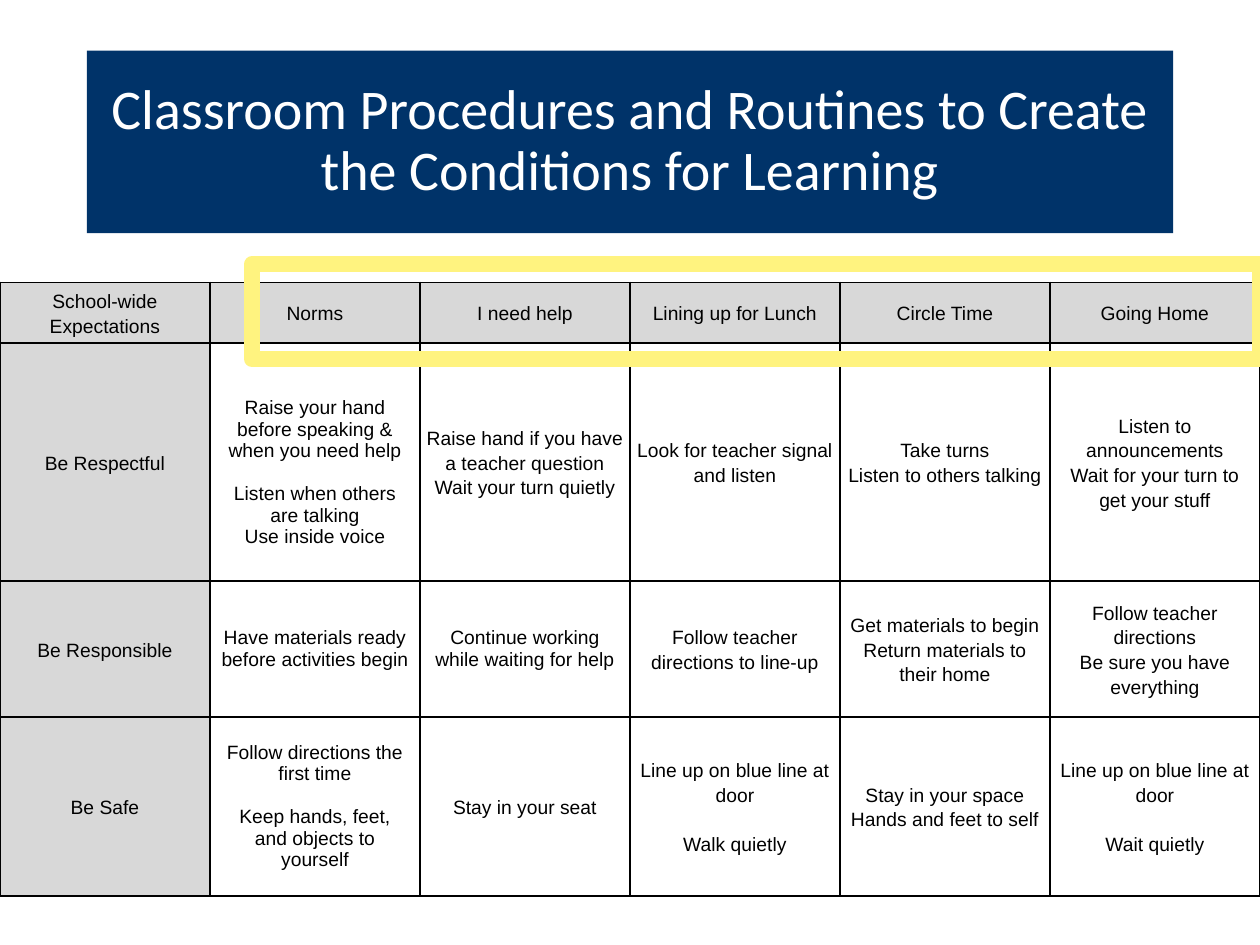
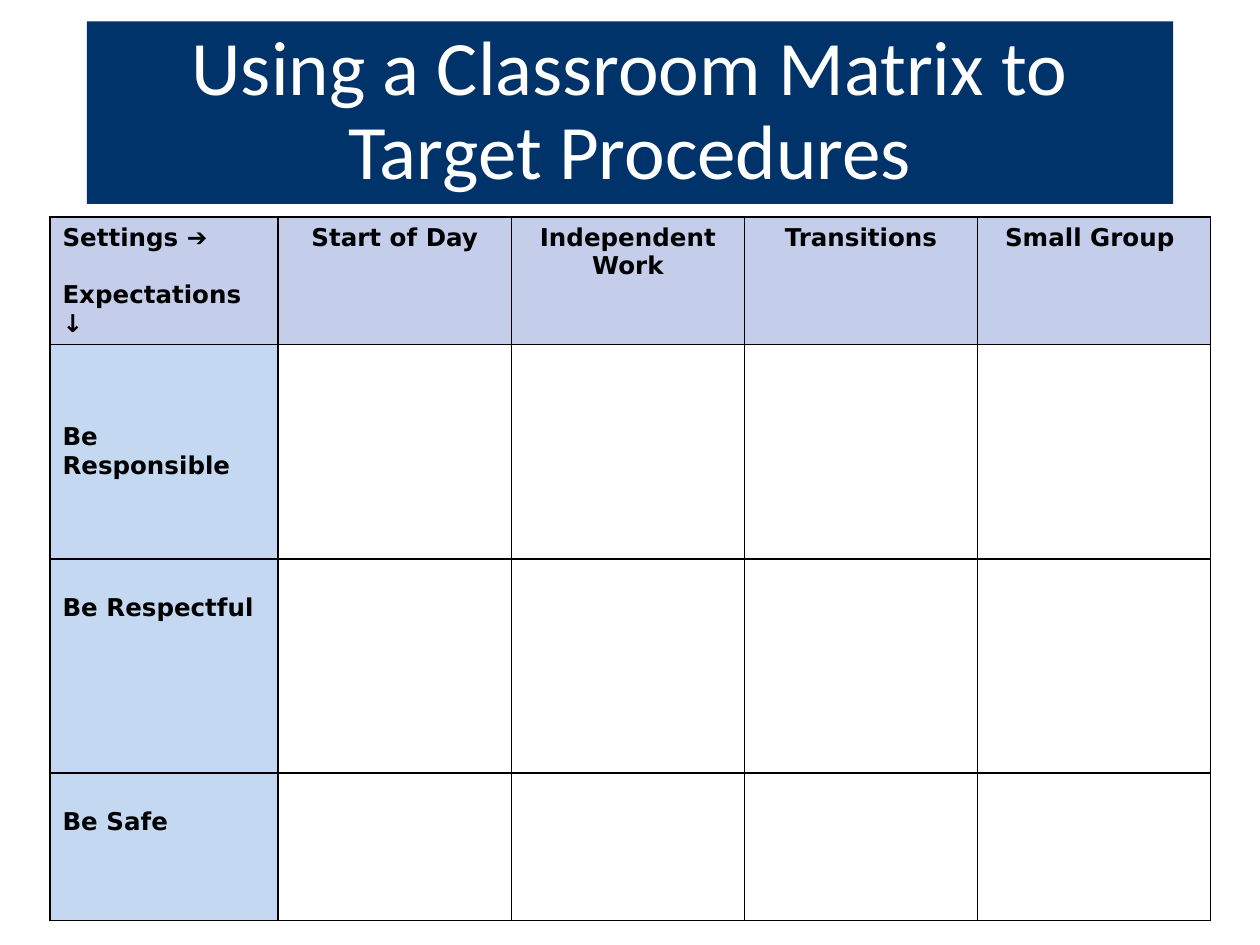
import pptx
import pptx.dml.color
import pptx.enum.shapes
import pptx.enum.text
import pptx.oxml.ns
import pptx.util
from lxml import etree

Cm = pptx.util.Cm
Pt = pptx.util.Pt
RGBColor = pptx.dml.color.RGBColor
ALIGN = pptx.enum.text.PP_ALIGN
ANCHOR = pptx.enum.text.MSO_ANCHOR
RECTANGLE = pptx.enum.shapes.MSO_SHAPE.RECTANGLE

NAVY = RGBColor(0x00, 0x33, 0x69)
WHITE = RGBColor(0xFF, 0xFF, 0xFF)
BLACK = RGBColor(0x00, 0x00, 0x00)
GREY = RGBColor(0xD8, 0xD8, 0xD8)
YELLOW = RGBColor(0xFF, 0xF3, 0x7F)
LAVENDER = RGBColor(0xC4, 0xCD, 0xEA)
PALE_BLUE = RGBColor(0xC5, 0xD8, 0xF1)

# Boxes are left, top, width, height in centimetres
SLIDE_W, SLIDE_H = 25.4, 19.05
TITLE_X, TITLE_W, TITLE_H = 1.75, 21.9, 3.68

# A line break starts a paragraph, a double one also leaves a gap
ROUTINES = [
    ["School-wide Expectations", "Norms", "I need help", "Lining up for Lunch",
     "Circle Time", "Going Home"],
    ["Be Respectful",
     "Raise your hand before speaking & when you need help\n\n"
     "Listen when others\nare talking\nUse inside voice",
     "Raise hand if you have a teacher question\nWait your turn quietly",
     "Look for teacher signal and listen",
     "Take turns\nListen to others talking",
     "Listen to announcements\nWait for your turn to get your stuff"],
    ["Be Responsible",
     "Have materials ready before activities begin",
     "Continue working while waiting for help",
     "Follow teacher directions to line-up",
     "Get materials to begin\nReturn materials to their home",
     "Follow teacher directions\nBe sure you have everything"],
    ["Be Safe",
     "Follow directions the\nfirst time\n\n"
     "Keep hands, feet,\nand objects to\nyourself",
     "Stay in your seat",
     "Line up on blue line at door\n\nWalk quietly",
     "Stay in your space\nHands and feet to self",
     "Line up on blue line at door\n\nWait quietly"],
]
SINGLE_SPACED = {(1, 1), (2, 1), (3, 1), (2, 2)}

SETTINGS = ["Settings ➔\n\nExpectations ↓", "Start of Day",
            "Independent Work", "Transitions", "Small Group "]
EXPECTATIONS = ["Be Responsible", "Be Respectful", "Be Safe"]


def write_text(tf, text, font, size, color=BLACK, bold=False,
               align=ALIGN.CENTER, spacing=1.0, gap=0):
    """Fill a text frame, with gap points between blocks of paragraphs."""
    p = None
    for block in text.split("\n\n"):
        for i, line in enumerate(block.split("\n")):
            starts_block = p is not None and i == 0
            p = tf.add_paragraph() if p is not None else tf.paragraphs[0]
            p.alignment = align
            p.line_spacing = spacing
            p.space_before = Pt(gap if starts_block else 0)
            r = p.add_run()
            r.text = line
            r.font.name = font
            r.font.size = Pt(size)
            r.font.bold = bold
            r.font.color.rgb = color


def add_rectangle(slide, box):
    sp = slide.shapes.add_shape(RECTANGLE, *map(Cm, box))
    sp.shadow.inherit = False
    return sp


def add_title(slide, top, text, size):
    sp = add_rectangle(slide, (TITLE_X, top, TITLE_W, TITLE_H))
    sp.fill.solid()
    sp.fill.fore_color.rgb = NAVY
    sp.line.fill.background()
    tf = sp.text_frame
    tf.word_wrap = True
    tf.vertical_anchor = ANCHOR.MIDDLE
    write_text(tf, text, "Calibri", size, color=WHITE, spacing=0.9)


def add_highlight(slide, box):
    sp = add_rectangle(slide, box)
    sp.fill.background()
    sp.line.color.rgb = YELLOW
    sp.line.width = Pt(9)
    etree.SubElement(sp.line._get_or_add_ln(), pptx.oxml.ns.qn("a:round"))


def add_grid(slide, left, top, widths, heights):
    """Add a plain table with thin black borders and unfilled cells."""
    frame = slide.shapes.add_table(
        len(heights), len(widths), Cm(left), Cm(top),
        Cm(sum(widths)), Cm(sum(heights)))
    table = frame.table
    table.first_row = table.horz_banding = False
    for column, width in zip(table.columns, widths):
        column.width = Cm(width)
    for row, height in zip(table.rows, heights):
        row.height = Cm(height)
    for cell in table.iter_cells():
        add_borders(cell)
        cell.fill.background()
    return table


def add_borders(cell):
    qn = pptx.oxml.ns.qn
    props = cell._tc.get_or_add_tcPr()
    for side in ("a:lnL", "a:lnR", "a:lnT", "a:lnB"):
        ln = etree.SubElement(props, qn(side), w=str(Pt(1)))
        fill = etree.SubElement(ln, qn("a:solidFill"))
        etree.SubElement(fill, qn("a:srgbClr"), val=str(BLACK))


def format_cell(cell, fill=None, anchor=ANCHOR.TOP, inset=(0.25, 0.13)):
    if fill is not None:
        cell.fill.solid()
        cell.fill.fore_color.rgb = fill
    cell.vertical_anchor = anchor
    cell.margin_left = cell.margin_right = Cm(inset[0])
    cell.margin_top = cell.margin_bottom = Cm(inset[1])


def add_routines_table(slide, box):
    left, top, width, height = box
    columns = len(ROUTINES[0])
    heights = [1.22, 4.8, 2.74]
    heights.append(height - sum(heights))
    table = add_grid(slide, left, top, [width / columns] * columns, heights)
    for i, row in enumerate(ROUTINES):
        for j, text in enumerate(row):
            cell = table.cell(i, j)
            heading = i == 0 or j == 0
            single = (i, j) in SINGLE_SPACED
            format_cell(cell, GREY if heading else None, ANCHOR.MIDDLE,
                        (0.08, 0) if heading else (0.13, 0.13))
            write_text(cell.text_frame, text, "Arial", 11,
                       spacing=1.0 if single else 1.15,
                       gap=12.3 if single else 14)
    # The first norms sit slightly below the middle
    table.cell(1, 1).margin_top = Cm(0.56)


def add_matrix_table(slide, box):
    left, top, width, height = box
    label_w, header_h, row_h = 4.6, 2.56, 4.32
    setting_w = (width - label_w) / (len(SETTINGS) - 1)
    widths = [label_w] + [setting_w] * (len(SETTINGS) - 1)
    heights = [header_h, row_h, row_h, height - header_h - 2 * row_h]
    table = add_grid(slide, left, top, widths, heights)
    style = dict(font="DejaVu Sans", size=14, bold=True, gap=16.3)
    # Settings across the top
    for j, text in enumerate(SETTINGS):
        cell = table.cell(0, j)
        format_cell(cell, LAVENDER)
        write_text(cell.text_frame, text, **style,
                   align=ALIGN.CENTER if j else ALIGN.LEFT)
    # Expectations down the side, the first one centred in its row
    for i, text in enumerate(EXPECTATIONS, start=1):
        cell = table.cell(i, 0)
        format_cell(cell, PALE_BLUE, ANCHOR.MIDDLE if i == 1 else ANCHOR.TOP)
        if i > 1:
            cell.margin_top = Cm(0.7)
        write_text(cell.text_frame, text, **style, align=ALIGN.LEFT)


def build_routines_slide(slide):
    add_title(slide, 1.02, "Classroom Procedures and Routines to Create "
              "the Conditions for Learning", 32)
    add_routines_table(slide, (0, 5.69, SLIDE_W, 12.37))
    add_highlight(slide, (5.08, 5.33, 20.32, 1.91))


def build_matrix_slide(slide):
    add_title(slide, 0.43, "Using a Classroom Matrix to Target Procedures", 44)
    add_matrix_table(slide, (1.01, 4.37, 23.4, 14.17))


def main():
    prs = pptx.Presentation()
    prs.slide_width, prs.slide_height = Cm(SLIDE_W), Cm(SLIDE_H)
    for build in (build_routines_slide, build_matrix_slide):
        build(prs.slides.add_slide(prs.slide_layouts[6]))
    prs.save("out.pptx")


if __name__ == "__main__":
    main()
